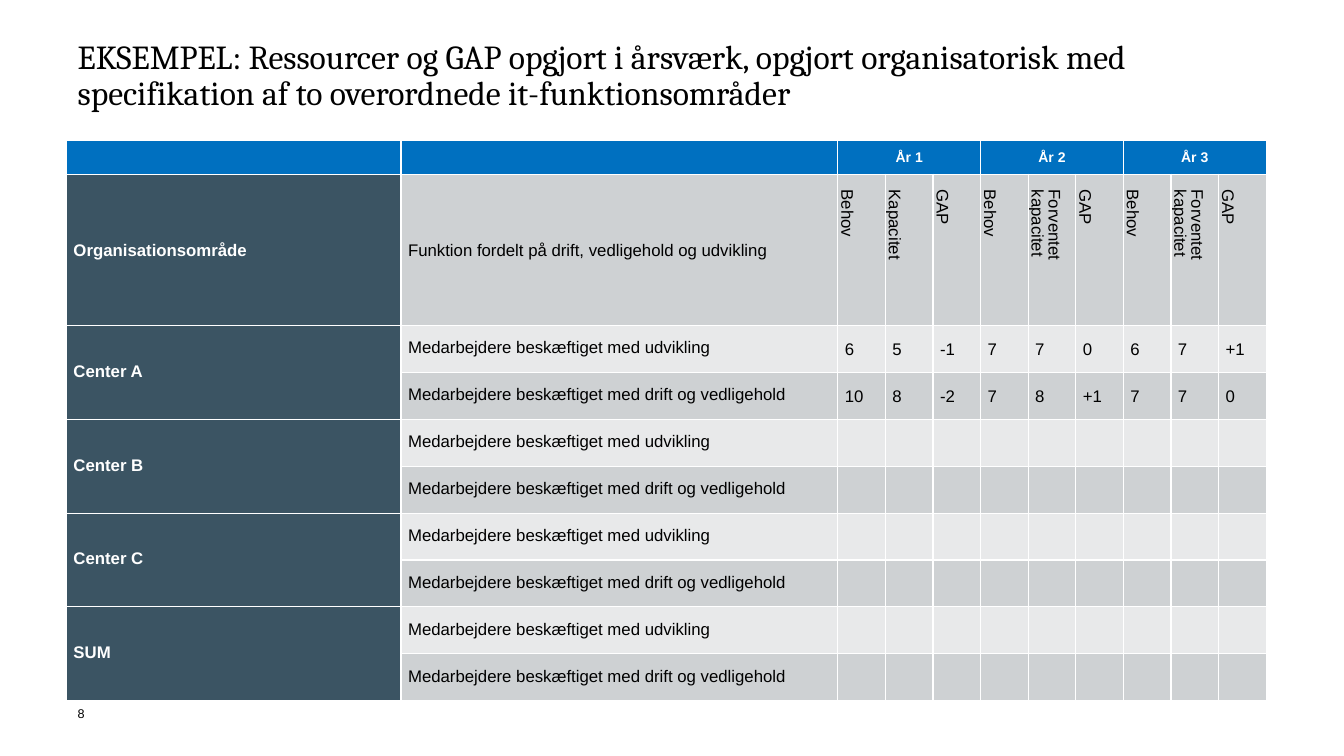
import pptx
import pptx.dml.color
import pptx.enum.text
import pptx.util

Pt = pptx.util.Pt
ALIGN = pptx.enum.text.PP_ALIGN
MIDDLE = pptx.enum.text.MSO_ANCHOR.MIDDLE

BLACK = "000000"
WHITE = "FFFFFF"
BLUE = "0070C0"
SLATE = "3B5463"
GREY = "CED1D3"
LIGHT_GREY = "E8E9EA"

YEARS = ["År 1", "År 2", "År 3"]
MEASURES = ["Behov", "Kapacitet", "GAP"] + ["Behov", "Forventet kapacitet", "GAP"] * 2
FUNCTIONS = [
    "Medarbejdere beskæftiget med udvikling",
    "Medarbejdere beskæftiget med drift og vedligehold",
]
AREAS = {
    "Center A": [
        ["6", "5", "-1", "7", "7", "0", "6", "7", "+1"],
        ["10", "8", "-2", "7", "8", "+1", "7", "7", "0"],
    ],
    "Center B": [[""] * 9] * 2,
    "Center C": [[""] * 9] * 2,
    "SUM": [[""] * 9] * 2,
}


def color(hex_string):
    return pptx.dml.color.RGBColor.from_string(hex_string)


def add_run(paragraph, text, size, font_name="Arial", font_color=BLACK, bold=False):
    run = paragraph.add_run()
    run.text = text
    run.font.size = Pt(size)
    run.font.name = font_name
    run.font.bold = bold
    run.font.color.rgb = color(font_color)


def add_text(slide, left, top, width, height, text, size, font_name, line_spacing):
    frame = slide.shapes.add_textbox(Pt(left), Pt(top), Pt(width), Pt(height)).text_frame
    frame.word_wrap = True
    frame.margin_left = frame.margin_right = frame.margin_top = frame.margin_bottom = 0
    frame.paragraphs[0].line_spacing = line_spacing
    add_run(frame.paragraphs[0], text, size, font_name)


def fill_cell(cell, text, fill, size=12, font_color=BLACK, bold=False, line=12,
              align=ALIGN.LEFT, vertical=False):
    cell.fill.solid()
    cell.fill.fore_color.rgb = color(fill)
    cell.vertical_anchor = MIDDLE
    cell.margin_left = cell.margin_right = Pt(5)
    cell.margin_top = cell.margin_bottom = 0
    paragraph = cell.text_frame.paragraphs[0]
    paragraph.line_spacing = Pt(line)
    paragraph.alignment = align
    if vertical:
        cell._tc.get_or_add_tcPr().set("vert", "vert")
        paragraph._p.get_or_add_pPr().set("marL", str(Pt(6)))
    if text:
        add_run(paragraph, text, size, font_color=font_color, bold=bold)
    else:
        paragraph._p.get_or_add_endParaRPr().set("sz", "1000")


def fill_year_row(table):
    for column in range(2):
        fill_cell(table.cell(0, column), "", BLUE)
    for index, year in enumerate(YEARS):
        first = 2 + 3 * index
        table.cell(0, first).merge(table.cell(0, first + 2))
        fill_cell(table.cell(0, first), year, BLUE, 10, WHITE, True, align=ALIGN.CENTER)


def fill_heading_row(table):
    fill_cell(table.cell(1, 0), "Organisationsområde", SLATE, font_color=WHITE, bold=True, line=14)
    fill_cell(table.cell(1, 1), "Funktion fordelt på drift, vedligehold og udvikling", GREY, line=14)
    for column, measure in enumerate(MEASURES, 2):
        fill_cell(table.cell(1, column), measure, GREY, vertical=True)


def fill_area(table, first_row, area, value_rows):
    table.cell(first_row, 0).merge(table.cell(first_row + 1, 0))
    fill_cell(table.cell(first_row, 0), area, SLATE, font_color=WHITE, bold=True)
    for offset, (function, values) in enumerate(zip(FUNCTIONS, value_rows)):
        fill = (LIGHT_GREY, GREY)[offset]
        row = first_row + offset
        fill_cell(table.cell(row, 1), function, fill)
        for column, value in enumerate(values, 2):
            fill_cell(table.cell(row, column), value, fill, line=14)


def add_resource_table(slide, left, top, width, height):
    area_width, function_width = 239, 312
    year_height, heading_height = 24.5, 101.5
    value_width = (width - area_width - function_width) / len(MEASURES)
    row_count = 2 * len(AREAS)
    value_height = (height - year_height - heading_height) / row_count
    table = slide.shapes.add_table(
        2 + row_count, 2 + len(MEASURES), Pt(left), Pt(top), Pt(width), Pt(height)
    ).table
    table.horz_banding = False
    widths = [area_width, function_width] + [value_width] * len(MEASURES)
    for column, column_width in zip(table.columns, widths):
        column.width = Pt(column_width)
    heights = [year_height, heading_height] + [value_height] * row_count
    for row, row_height in zip(table.rows, heights):
        row.height = Pt(row_height)
    fill_year_row(table)
    fill_heading_row(table)
    for index, (area, value_rows) in enumerate(AREAS.items()):
        fill_area(table, 2 + 2 * index, area, value_rows)


def main():
    presentation = pptx.Presentation()
    presentation.slide_width = Pt(960)
    presentation.slide_height = Pt(540)
    slide = presentation.slides.add_slide(presentation.slide_layouts[6])
    add_text(slide, 55.5, 504, 22, 21.5, "8", 9, "Arial", 1.0)
    add_text(
        slide, 55.5, 29, 850, 73.5,
        "EKSEMPEL: Ressourcer og GAP opgjort i årsværk, opgjort organisatorisk med "
        "specifikation af to overordnede it-funktionsområder",
        24, "Cambria", 0.9,
    )
    add_resource_table(slide, 47.5, 100, 857, 394)
    presentation.save("out.pptx")


if __name__ == "__main__":
    main()
